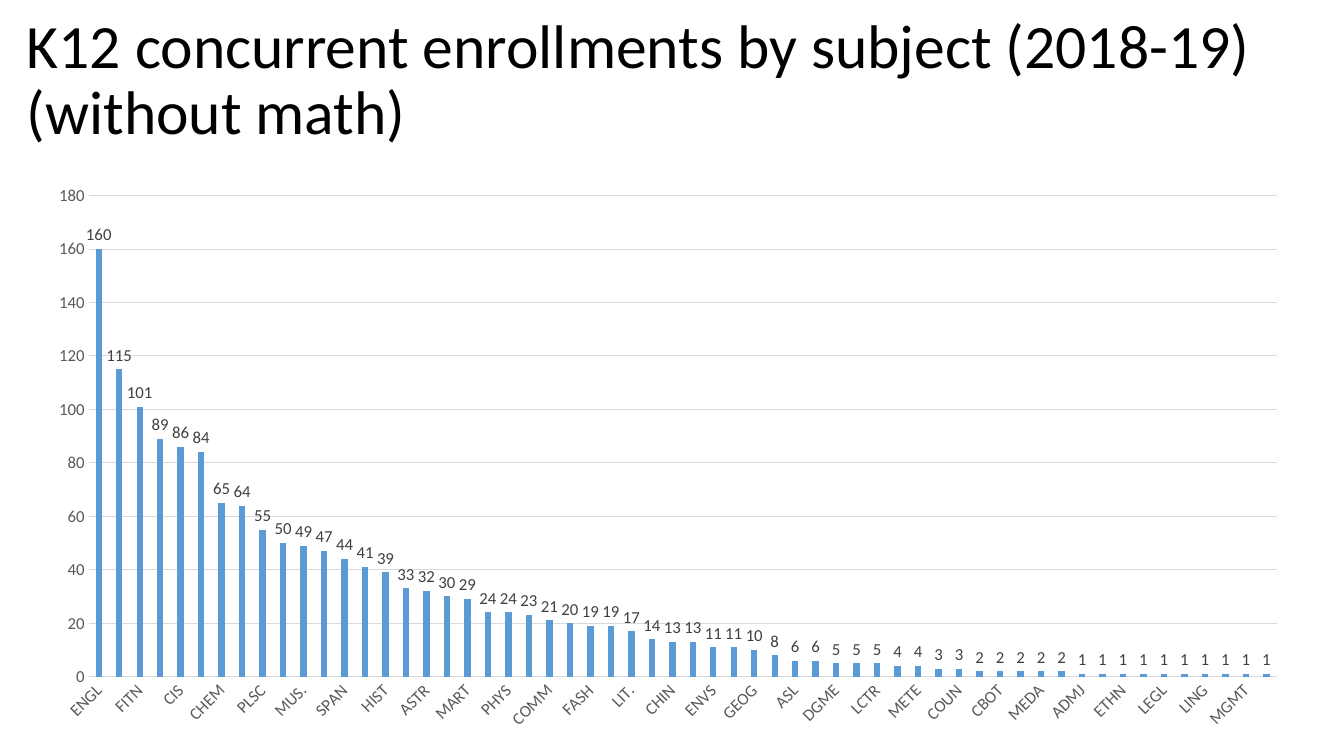
"""Build a slide charting K12 concurrent enrollments by subject."""
import pptx
import pptx.chart.data
import pptx.dml.color
import pptx.enum.chart
import pptx.enum.text
import pptx.util

Pt = pptx.util.Pt
COLOURS = {"title": "000000", "bar": "5B9BD5", "axis": "595959",
           "rule": "D9D9D9", "label": "404040"}
FONT = "Calibri"
ENROLLMENTS = {
    "ENGL": 160, "BIOL": 115, "FITN": 101, "PSYC": 89, "CIS": 86, "ANTH": 84,
    "CHEM": 65, "BUS.": 64, "PLSC": 55, "ART": 50, "MUS.": 49, "ECON": 47,
    "SPAN": 44, "ESL": 41, "HIST": 39, "ECE.": 33, "ASTR": 32, "SOCI": 30,
    "MART": 29, "PHIL": 24, "PHYS": 24, "DRAM": 23, "COMM": 21, "BTEC": 20,
    "FASH": 19, "OCEN": 19, "LIT.": 17, "KINE": 14, "CHIN": 13, "DANC": 13,
    "ENVS": 11, "TEAM": 11, "GEOG": 10, "ACTG": 8, "ASL": 6, "CRER": 6,
    "DGME": 5, "HSCI": 5, "LCTR": 5, "ENGR": 4, "METE": 4, "AUTO": 3,
    "COUN": 3, "ARCH": 2, "CBOT": 2, "COOP": 2, "MEDA": 2, "R.E.": 2,
    "ADMJ": 1, "AQUA": 1, "ETHN": 1, "INTD": 1, "LEGL": 1, "LIBR": 1,
    "LING": 1, "LSKL": 1, "MGMT": 1, "WELL": 1,
}


def colour(name):
    return pptx.dml.color.RGBColor.from_string(COLOURS[name])


def apply_format(target, values):
    for name, value in values.items():
        setattr(target, name, value)


deck = pptx.Presentation()
apply_format(deck, {"slide_width": Pt(960), "slide_height": Pt(540)})
page = deck.slides.add_slide(deck.slide_layouts[5])

title = page.shapes.title
apply_format(title, {"left": Pt(12), "top": Pt(6),
                     "width": Pt(926), "height": Pt(104.4)})
apply_format(title.text_frame, {
    "text": "K12 concurrent enrollments by subject (2018-19) (without math)",
    "word_wrap": True,
    "auto_size": pptx.enum.text.MSO_AUTO_SIZE.NONE,
    "vertical_anchor": pptx.enum.text.MSO_ANCHOR.MIDDLE})
para = title.text_frame.paragraphs[0]
apply_format(para, {"alignment": pptx.enum.text.PP_ALIGN.LEFT, "line_spacing": 0.9})
span = para.runs[0]
apply_format(span.font, {"name": FONT, "size": Pt(44)})
span.font.color.rgb = colour("title")

data = pptx.chart.data.CategoryChartData()
data.categories = list(ENROLLMENTS)
data.add_series("Series 1", list(ENROLLMENTS.values()))
chart = page.shapes.add_chart(
    pptx.enum.chart.XL_CHART_TYPE.COLUMN_CLUSTERED,
    Pt(24), Pt(124.5), Pt(906), Pt(404.5), data).chart
apply_format(chart, {"has_legend": False, "has_title": False})

plot = chart.plots[0]
apply_format(plot, {"gap_width": 219, "overlap": -27,
                    "vary_by_categories": False, "has_data_labels": True})
bars = plot.series[0]
bars.format.fill.solid()
bars.format.fill.fore_color.rgb = colour("bar")
labels = plot.data_labels
apply_format(labels, {"show_value": True,
                      "position": pptx.enum.chart.XL_LABEL_POSITION.OUTSIDE_END})

subjects, counts = chart.category_axis, chart.value_axis
for axis in (subjects, counts):
    apply_format(axis, {"major_tick_mark": pptx.enum.chart.XL_TICK_MARK.NONE,
                        "minor_tick_mark": pptx.enum.chart.XL_TICK_MARK.NONE})
apply_format(subjects, {"has_major_gridlines": False})
apply_format(counts, {"has_major_gridlines": True, "minimum_scale": 0,
                      "maximum_scale": 180, "major_unit": 20})
counts.format.line.fill.background()

for font, name in ((chart.font, "title"), (labels.font, "label"),
                   (subjects.tick_labels.font, "axis"),
                   (counts.tick_labels.font, "axis")):
    apply_format(font, {"name": FONT, "size": Pt(12)})
    font.color.rgb = colour(name)
for line in (subjects.format.line, counts.major_gridlines.format.line):
    line.color.rgb = colour("rule")
    line.width = Pt(0.75)

text_body = subjects._element.find(pptx.oxml.ns.qn("c:txPr"))
text_body.find(pptx.oxml.ns.qn("a:bodyPr")).set("rot", "-2700000")

deck.save("out.pptx")
